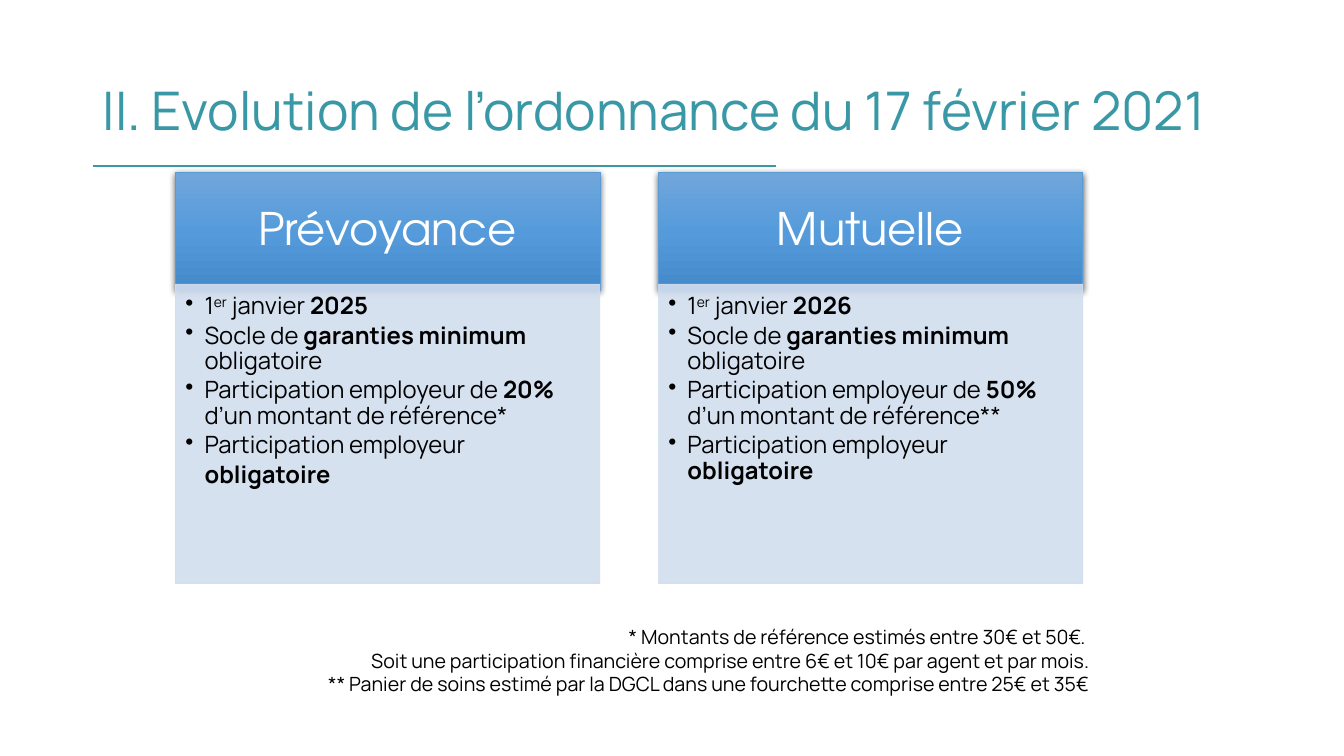
from lxml import etree
from pptx import Presentation
from pptx.dml.color import RGBColor
from pptx.enum import shapes, text
from pptx.oxml import ns
from pptx.util import Inches, Pt

TEAL = RGBColor(0x39, 0x98, 0xA5)
BLUE = RGBColor(0x5B, 0x9B, 0xD5)
PALE = RGBColor(0xD2, 0xDE, 0xEF)
WHITE = RGBColor(0xFF, 0xFF, 0xFF)
BLACK = RGBColor(0, 0, 0)
HEADER_GRADIENT = ((0, "71A6DB"), (50, "559BDB"), (100, "448ACA"))

TITLE = "II. Evolution de l’ordonnance du 17 février 2021"
COLUMNS = (
    {"name": "Prévoyance", "year": "2025", "share": "20%", "mark": "*", "ending": "\t"},
    {"name": "Mutuelle", "year": "2026", "share": "50%", "mark": "**", "ending": ""},
)
NOTES = (
    "* Montants de référence estimés entre 30€ et 50€. ",
    "Soit une participation financière comprise entre 6€ et 10€ par agent et par mois.",
    "** Panier de soins estimé par la DGCL dans une fourchette comprise entre 25€ et 35€",
)

COLUMN_LEFT, COLUMN_STEP, COLUMN_WIDTH = 1.74, 4.79, 4.21
HEADER_TOP, HEADER_HEIGHT = 1.71, 1.17
BODY_TOP, BODY_HEIGHT = 2.82, 2.97


def bullet_lines(column):
    return (
        (("1", ""), ("er", "super"), (" janvier ", ""), (column["year"], "bold")),
        (("Socle de ", ""), ("garanties minimum ", "bold"), ("obligatoire", "")),
        (("Participation employeur de ", ""), (column["share"], "bold"),
         (" d’un montant de référence" + column["mark"], "")),
        (("Participation employeur ", ""), ("obligatoire", "bold"), (column["ending"], "tab")),
    )


def add_run(paragraph, words, size, color, font="Manrope"):
    run = paragraph.add_run()
    run.text = words
    run.font.size = Pt(size)
    run.font.name = font
    run.font.color.rgb = color
    return run


def set_frame(shape, anchor, margins=(0.1, 0.05, 0.1, 0.05)):
    frame = shape.text_frame
    frame.word_wrap = True
    frame.vertical_anchor = anchor
    (frame.margin_left, frame.margin_top,
     frame.margin_right, frame.margin_bottom) = map(Inches, margins)
    return frame


def add_text_box(slide, left, top, width, height, anchor):
    box = slide.shapes.add_textbox(Inches(left), Inches(top), Inches(width), Inches(height))
    return set_frame(box, anchor)


def add_panel(slide, left, top, height, line_color):
    panel = slide.shapes.add_shape(shapes.MSO_SHAPE.RECTANGLE, Inches(left), Inches(top),
                                   Inches(COLUMN_WIDTH), Inches(height))
    panel.shadow.inherit = False
    panel.line.color.rgb = line_color
    panel.line.width = Pt(0.5)
    return panel


def add_header(slide, left, name):
    header = add_panel(slide, left, HEADER_TOP, HEADER_HEIGHT, BLUE)
    properties = header._element.spPr
    stops = "".join(f'<a:gs pos="{position * 1000}"><a:srgbClr val="{color}"/></a:gs>'
                    for position, color in HEADER_GRADIENT)
    gradient = etree.fromstring(
        f'<a:gradFill {ns.nsdecls("a")} rotWithShape="1"><a:gsLst>{stops}</a:gsLst>'
        '<a:lin ang="5400000" scaled="0"/></a:gradFill>')
    properties.find(ns.qn("a:prstGeom")).addnext(gradient)
    shadow = etree.fromstring(
        f'<a:outerShdw {ns.nsdecls("a")} blurRad="{Pt(4.5)}" dist="{Pt(1.5)}" dir="5400000" '
        'algn="ctr" rotWithShape="0"><a:srgbClr val="000000"><a:alpha val="63000"/>'
        '</a:srgbClr></a:outerShdw>')
    properties.find(ns.qn("a:effectLst")).append(shadow)
    frame = set_frame(header, text.MSO_ANCHOR.MIDDLE, (0.25, 0.14, 0.25, 0.14))
    paragraph = frame.paragraphs[0]
    paragraph.alignment = text.PP_ALIGN.CENTER
    paragraph.line_spacing = 0.9
    add_run(paragraph, name, 32, WHITE, "TeX Gyre Adventor")


def add_body(slide, left, lines):
    body = add_panel(slide, left, BODY_TOP, BODY_HEIGHT, PALE)
    body.fill.solid()
    body.fill.fore_color.rgb = PALE
    for color in body._element.spPr.iter(ns.qn("a:srgbClr")):
        etree.SubElement(color, ns.qn("a:alpha"), val="90000")
    frame = set_frame(body, text.MSO_ANCHOR.TOP, (0.1, 0.1, 0.13, 0.15))
    for index, line in enumerate(lines):
        paragraph = frame.add_paragraph() if index else frame.paragraphs[0]
        paragraph.alignment = text.PP_ALIGN.LEFT
        paragraph.line_spacing = 0.9
        paragraph.space_after = Pt(2.5)
        properties = paragraph._p.get_or_add_pPr()
        properties.set("marL", str(Inches(0.19)))
        properties.set("indent", str(Inches(-0.19)))
        etree.SubElement(properties, ns.qn("a:buChar"), char="•")
        for words, style in line:
            if not words:
                continue
            if style == "tab":
                add_run(paragraph, words, 20, BLACK, "Calibri")
                continue
            run = add_run(paragraph, words, 17, BLACK)
            run.font.bold = style == "bold"
            if style == "super":
                run._r.get_or_add_rPr().set("baseline", "30000")


def main():
    presentation = Presentation()
    presentation.slide_width = Inches(13.33)
    presentation.slide_height = Inches(7.5)
    slide = presentation.slides.add_slide(presentation.slide_layouts[6])

    rule = slide.shapes.add_connector(shapes.MSO_CONNECTOR.STRAIGHT, Inches(0.92),
                                      Inches(1.65), Inches(7.7), Inches(1.65))
    rule.line.color.rgb = TEAL
    rule.line.width = Pt(1.5)
    etree.SubElement(rule._element.spPr, ns.qn("a:effectLst"))

    title = add_text_box(slide, 0.92, 0.4, 12.41, 1.45, text.MSO_ANCHOR.MIDDLE)
    title.paragraphs[0].line_spacing = 0.9
    add_run(title.paragraphs[0], TITLE, 38, TEAL)

    for index, column in enumerate(COLUMNS):
        left = COLUMN_LEFT + index * COLUMN_STEP
        add_header(slide, left, column["name"])
        add_body(slide, left, bullet_lines(column))

    notes = add_text_box(slide, 1.91, 6.15, 9, 0.81, text.MSO_ANCHOR.TOP)
    for index, note in enumerate(NOTES):
        paragraph = notes.add_paragraph() if index else notes.paragraphs[0]
        paragraph.alignment = text.PP_ALIGN.RIGHT
        add_run(paragraph, note, 14, BLACK)

    presentation.save("out.pptx")


if __name__ == "__main__":
    main()
